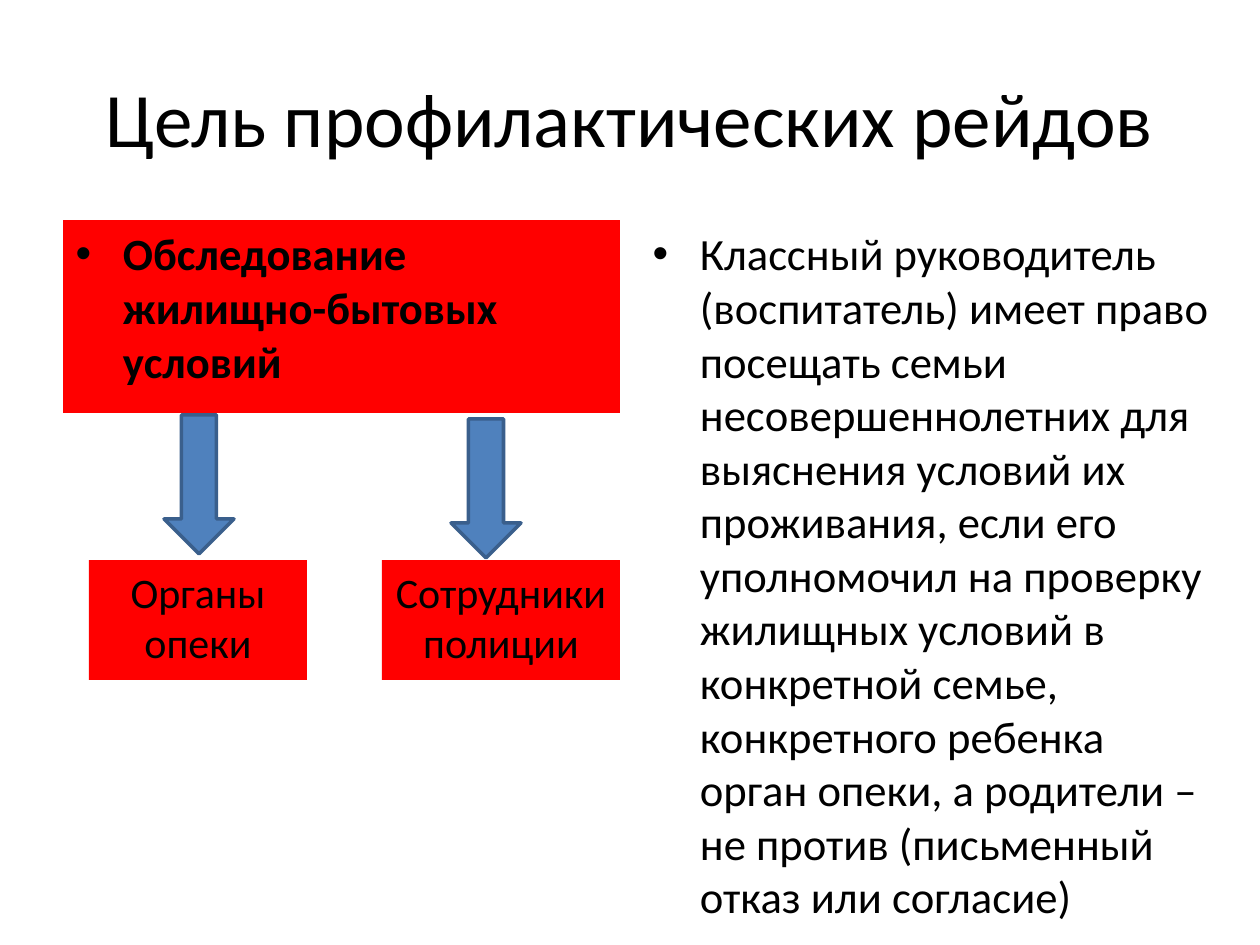
from dataclasses import dataclass

from pptx import Presentation
from pptx.dml.color import RGBColor
from pptx.enum.shapes import MSO_SHAPE as Shape
from pptx.enum.text import MSO_ANCHOR as Anchor, MSO_AUTO_SIZE as AutoSize, PP_ALIGN as Align
from pptx.util import Emu, Pt

PX_PER_INCH = 126


@dataclass(frozen=True)
class Theme:
    font: str = "Calibri"
    ink: RGBColor = RGBColor(0x00, 0x00, 0x00)
    panel: RGBColor = RGBColor(0xFF, 0x00, 0x00)
    arrow: RGBColor = RGBColor(0x4F, 0x81, 0xBD)
    arrow_edge: RGBColor = RGBColor(0x3A, 0x5F, 0x8C)
    title_size: float = 44
    body_size: float = 25.5
    label_size: float = 24


THEME = Theme()


def px(length):
    return Emu(round(length * 914400 / PX_PER_INCH))


def place(part, box):
    part.left, part.top, part.width, part.height = map(px, box)


def fill_with(part, color):
    part.fill.solid()
    part.fill.fore_color.rgb = color


def write(part, text, size, bold=False, align=None, anchor=Anchor.TOP):
    frame = part.text_frame
    frame.word_wrap = True
    frame.auto_size = AutoSize.NONE
    frame.vertical_anchor = anchor
    paragraph = frame.paragraphs[0]
    paragraph.alignment = align
    run = paragraph.add_run()
    run.text = text
    run.font.name = THEME.font
    run.font.size = Pt(size)
    run.font.bold = bold
    run.font.color.rgb = THEME.ink


def add_block(slide, kind, box, color):
    block = slide.shapes.add_shape(kind, *map(px, box))
    block.shadow.inherit = False
    fill_with(block, color)
    return block


def add_title(heading, box):
    place(heading, box)
    write(heading, "Цель профилактических рейдов", THEME.title_size,
          align=Align.CENTER, anchor=Anchor.MIDDLE)


def add_participant(slide, name, box, arrow_offset):
    left, top, width, height = box
    arrow_left, arrow_top = arrow_offset
    arrow = add_block(slide, Shape.DOWN_ARROW,
                      (left + arrow_left, top + arrow_top, 70, 139), THEME.arrow)
    arrow.line.color.rgb = THEME.arrow_edge
    arrow.line.width = Pt(2)
    participant = add_block(slide, Shape.RECTANGLE, box, THEME.panel)
    participant.line.fill.background()
    write(participant, name, THEME.label_size, align=Align.CENTER)


def add_survey(slide, survey, box):
    left, top, width, height = box
    place(survey, (left, top, width, 193))
    fill_with(survey, THEME.panel)
    write(survey, "Обследование жилищно-бытовых условий", THEME.body_size, bold=True)
    participants = [
        ("Органы опеки", 26, 218, (75, -145)),
        ("Сотрудники полиции", 319, 238, (69, -141)),
    ]
    for name, offset, label_width, arrow_offset in participants:
        add_participant(slide, name, (left + offset, top + 340, label_width, 120), arrow_offset)


def add_rights(rights, box):
    place(rights, box)
    write(rights, "Классный руководитель (воспитатель) имеет право посещать семьи "
                  "несовершеннолетних для выяснения условий их проживания, если его "
                  "уполномочил на проверку жилищных условий в конкретной семье, "
                  "конкретного ребенка орган опеки, а родители – не против "
                  "(письменный отказ или согласие)", THEME.body_size)


def main():
    deck = Presentation()
    deck.slide_width, deck.slide_height = px(1260), px(945)
    slide = deck.slides.add_slide(deck.slide_layouts[3])
    heading, survey, rights = slide.placeholders
    add_title(heading, (63, 38, 1134, 158))
    add_survey(slide, survey, (63, 220, 557, 460))
    add_rights(rights, (640, 220, 585, 688))
    deck.save("out.pptx")


if __name__ == "__main__":
    main()
